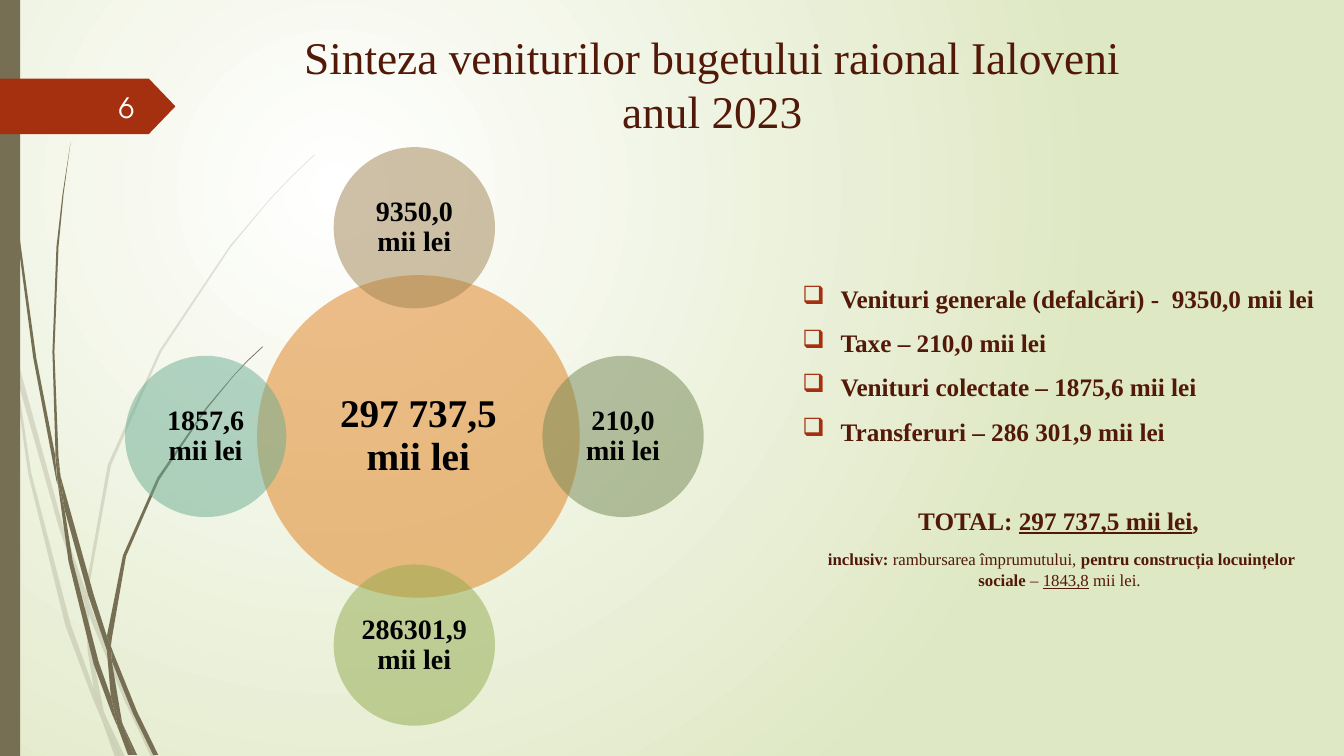
from pptx import Presentation
from pptx.dml.color import RGBColor
from pptx.enum.shapes import MSO_SHAPE as Shape
from pptx.enum.text import MSO_ANCHOR as Anchor, PP_ALIGN as Align
from pptx.oxml.ns import qn
from pptx.util import Pt
from lxml.etree import SubElement

PX = 9144  # one px is a hundredth of an inch


class Theme:
    SERIF, SANS = "Times New Roman", "TeX Gyre Adventor"
    TITLE, TOTAL, BODY, BUBBLE, NOTE = 32.4, 28, 18, 20, 12
    INK, BLACK, WHITE = "521808", "000000", "FEFFFF"
    RUST, STEM = "A53010", "766F54"
    GLOW, MEADOW = "FFFFFF", "DFE8C4"
    ORANGE, TAN, MOSS, LIME, TEAL = "DE7E18", "9F8351", "728653", "92AA4C", "6AAC91"


def paint(shape, color, opacity=100):
    shape.shadow.inherit = False
    shape.line.fill.background()
    shape.fill.solid()
    shape.fill.fore_color.rgb = RGBColor.from_string(color)
    if opacity < 100:
        tint = shape.fill._xPr.find(".//" + qn("a:srgbClr"))
        SubElement(tint, qn("a:alpha")).set("val", str(opacity * 1000))


def write(frame, *spans, size=Theme.BODY, color=Theme.INK, font=Theme.SERIF,
          bold=True, align=Align.LEFT, before=0, spacing=None, bullet=None):
    """Add a paragraph; a span is a text, a line break, or (text, bold, underline)."""
    frame.word_wrap = True
    para = frame.paragraphs[0]
    if para.runs:
        para = frame.add_paragraph()
    para.alignment = align
    para.space_before = Pt(before)
    para.line_spacing = spacing
    if bullet:
        props = para._p.get_or_add_pPr()
        props.set("marL", str(38 * PX))
        props.set("indent", str(-38 * PX))
        tint = SubElement(props, qn("a:buClr"))
        SubElement(tint, qn("a:srgbClr")).set("val", Theme.RUST)
        SubElement(props, qn("a:buChar")).set("char", bullet)
    for item in spans:
        if item == "\n":
            para.add_line_break()
            continue
        text, heavy, underline = (item, bold, False) if isinstance(item, str) else item
        span = para.add_run()
        span.text = text
        span.font.name, span.font.size = font, Pt(size)
        span.font.bold, span.font.underline = heavy, underline
        span.font.color.rgb = RGBColor.from_string(color)


deck = Presentation()
deck.slide_width, deck.slide_height = 1333 * PX, 750 * PX
page = deck.slides.add_slide(deck.slide_layouts[6])
shapes = page.shapes

# Background glow
backdrop = page.background.fill
backdrop.gradient()
for stop, position, color in zip(backdrop.gradient_stops, (0, 1), (Theme.GLOW, Theme.MEADOW)):
    stop.position = position
    stop.color.rgb = RGBColor.from_string(color)
gradient = page._element.find(".//" + qn("a:gradFill"))
gradient.remove(gradient.find(qn("a:lin")))
circle = SubElement(gradient, qn("a:path"))
circle.set("path", "circle")
focus = SubElement(circle, qn("a:fillToRect"))
for side, percent in zip("ltrb", (50, 50, 100, 100)):
    focus.set(side, str(percent * 1000))

# Grass: each blade is made of pieces that meet edge to edge
pale_grass = [
    [(11, 350), (9, 322), (0, 282), (0, 299), (10, 344)],
    [(58, 522), (84, 599), (85, 586), (62, 520), (14, 345), (17, 376)],
    [(92, 607), (88, 596), (88, 610), (123, 694), (150, 751), (155, 751), (127, 692)],
    [(119, 751), (124, 751), (105, 711)],
    [(93, 683), (70, 619), (31, 469), (17, 376), (11, 350), (28, 470), (65, 621),
     (92, 693), (101, 714), (99, 707)],
    [(84, 599), (87, 646), (93, 683), (96, 692), (105, 711), (103, 706), (91, 646),
     (88, 610), (88, 608)],
    [(88, 584), (110, 462), (160, 349), (229, 245), (268, 198), (290, 175), (312, 154),
     (312, 153), (289, 175), (268, 197), (228, 244), (158, 348), (107, 461), (85, 584),
     (85, 586), (88, 596)],
    [(101, 714), (114, 751), (119, 751)],
    [(88, 608), (88, 610), (88, 596), (85, 586), (84, 599)],
    [(96, 692), (93, 683), (99, 707), (101, 714), (119, 751), (105, 711)],
]
dark_grass = [
    [(7, 110), (17, 233), (33, 355), (56, 477), (57, 481), (55, 457), (55, 453), (36, 355),
     (19, 232), (8, 109), (5, 48), (4, 0), (3, 0), (4, 48)],
    [(88, 592), (106, 645), (106, 633), (106, 631), (93, 590), (60, 472), (64, 505)],
    [(113, 649), (110, 641), (111, 656), (132, 708), (152, 749), (157, 749), (136, 706)],
    [(110, 691), (98, 657), (72, 556), (64, 505), (57, 477), (68, 557), (93, 659),
     (111, 708), (117, 722), (116, 717)],
    [(60, 472), (58, 453), (54, 349), (58, 245), (63, 193), (70, 141), (62, 193),
     (56, 245), (52, 349), (55, 449)],
    [(133, 749), (136, 749), (122, 719)],
    [(57, 477), (64, 505), (60, 472), (55, 449), (55, 453)],
    [(111, 633), (125, 552), (158, 476), (205, 406), (231, 374), (245, 359), (261, 344),
     (260, 344), (245, 358), (231, 373), (204, 405), (156, 474), (122, 551), (106, 631),
     (110, 641)],
    [(117, 722), (127, 749), (131, 749)],
    [(106, 645), (110, 691), (116, 706), (122, 719), (121, 716), (111, 656), (109, 651)],
    [(106, 645), (109, 651), (111, 656), (110, 641), (106, 631), (106, 633)],
    [(116, 706), (110, 691), (116, 717), (117, 722), (130, 749), (133, 749), (122, 719)],
]
for pieces, opacity in ((pale_grass, 20), (dark_grass, 100)):
    for corners in pieces:
        outline = shapes.build_freeform(*corners[0], scale=PX)
        outline.add_line_segments(corners[1:], close=True)
        paint(outline.convert_to_shape(), Theme.STEM, opacity)

# Left bar and page tag
bar = shapes.add_shape(Shape.RECTANGLE, 0, 0, 20 * PX, 750 * PX)
paint(bar, Theme.STEM)
tag = shapes.add_shape(Shape.PENTAGON, 0, 78 * PX, 174 * PX, 55 * PX)
tag.adjustments[0] = 0.48
paint(tag, Theme.RUST)
number = shapes.add_textbox(58 * PX, 86 * PX, 85 * PX, 40 * PX).text_frame
number.vertical_anchor = Anchor.MIDDLE
write(number, "6", size=Theme.BUBBLE, color=Theme.WHITE, font=Theme.SANS,
      bold=False, align=Align.RIGHT)

# Title
title = shapes.add_textbox(155 * PX, 24 * PX, 1103 * PX, 121 * PX).text_frame
write(title, "Sinteza veniturilor bugetului raional Ialoveni", "\n", "anul 2023",
      size=Theme.TITLE, bold=False, align=Align.CENTER)

# Revenue list and total
body = shapes.add_textbox(786 * PX, 276 * PX, 534 * PX, 444 * PX).text_frame
for line in ("Venituri generale (defalcări) -  9350,0 mii lei", "Taxe – 210,0 mii lei",
             "Venituri colectate – 1875,6 mii lei", "Transferuri – 286 301,9 mii lei"):
    write(body, line, before=10 if body.text else 0, bullet="❑")
write(body, "TOTAL: ", ("297 737,5 mii lei", True, True), ", ", align=Align.CENTER, before=42)
write(body, "inclusiv: ", ("rambursarea împrumutului, ", False, False),
      "pentru construcția locuințelor sociale", (" – ", False, False),
      ("1843,8", False, True), (" mii lei. ", False, False),
      size=Theme.NOTE, align=Align.CENTER, before=10)

# Revenue bubbles: the total, with its parts around it
LARGE, SMALL, REACH = 320, 160, 207
CENTER_X, CENTER_Y = 411, 433
bubbles = [
    ("297 737,5 mii lei", Theme.ORANGE, LARGE, 0.02, 0, Theme.TOTAL),
    ("9350,0 mii lei", Theme.TAN, SMALL, 0, -1, Theme.BUBBLE),
    ("210,0 mii lei", Theme.MOSS, SMALL, 1, 0, Theme.BUBBLE),
    ("286301,9 mii lei", Theme.LIME, SMALL, 0, 1, Theme.BUBBLE),
    ("1857,6 mii lei", Theme.TEAL, SMALL, -1, 0, Theme.BUBBLE),
]
for text, color, size, across, down, type_size in bubbles:
    x = round(CENTER_X + across * REACH - size / 2)
    y = round(CENTER_Y + down * REACH - size / 2)
    bubble = shapes.add_shape(Shape.OVAL, x * PX, y * PX, size * PX, size * PX)
    paint(bubble, color, 50)
    frame = bubble.text_frame
    frame.vertical_anchor = Anchor.MIDDLE
    inset = size // 40 * PX
    frame.margin_left = frame.margin_right = frame.margin_top = frame.margin_bottom = inset
    write(frame, text, size=type_size, color=Theme.BLACK, align=Align.CENTER, spacing=0.9)

deck.save("out.pptx")
